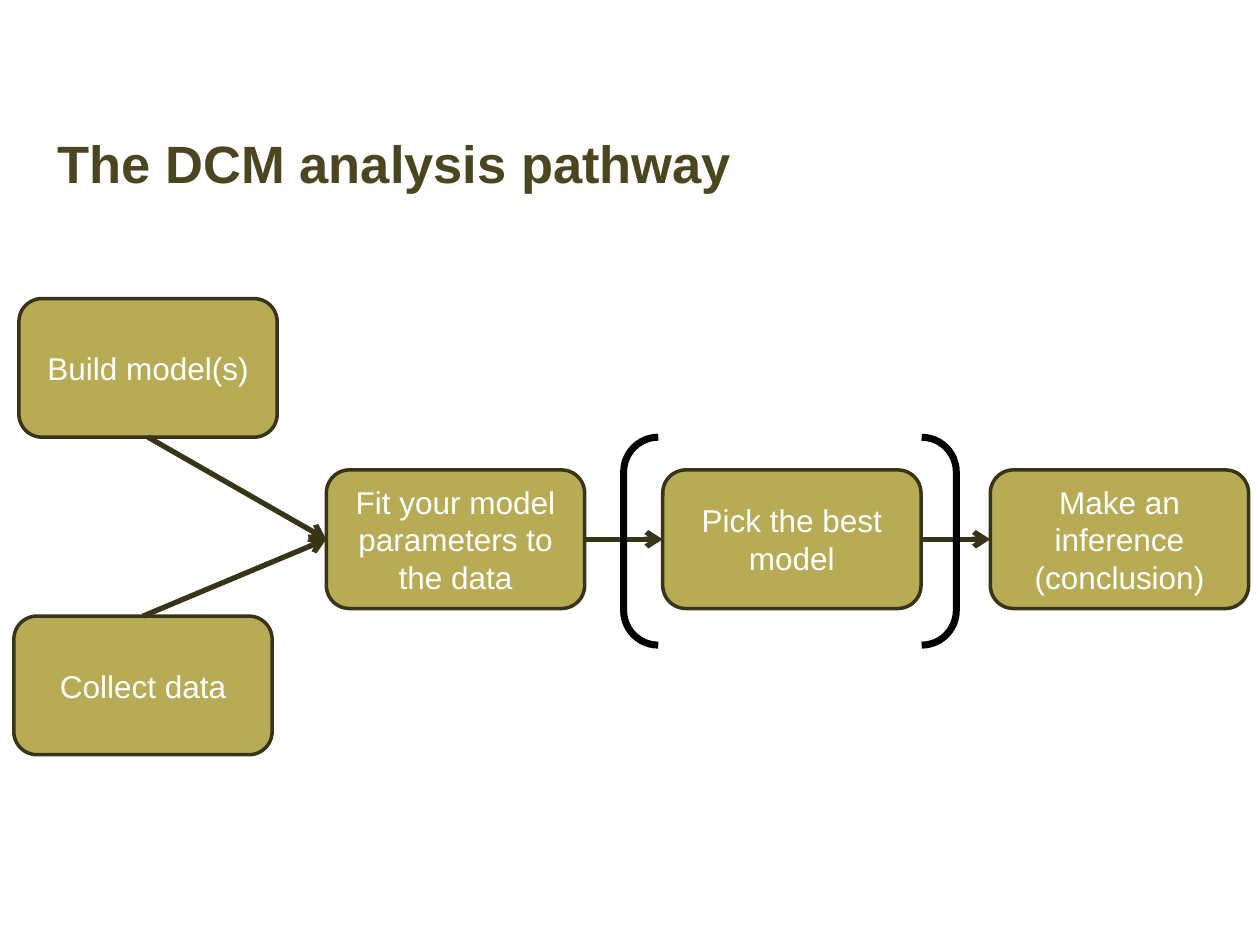
"""Build the DCM analysis pathway slide."""
from dataclasses import dataclass

from lxml import etree
from pptx import Presentation
from pptx.dml.color import RGBColor
from pptx.enum import shapes, text
from pptx.oxml import ns
from pptx.util import Inches, Pt

OLIVE = RGBColor(0xB7, 0xAB, 0x56)
DARK_OLIVE = RGBColor(0x38, 0x34, 0x18)
TITLE_OLIVE = RGBColor(0x4B, 0x46, 0x20)
WHITE = RGBColor(0xFF, 0xFF, 0xFF)
BLACK = RGBColor(0, 0, 0)
FONT = "Arial"
STEP_WIDTH, STEP_HEIGHT = 2.05, 1.1
ROW_TOP = 3.73
TOP, LEFT, BOTTOM, RIGHT = range(4)


@dataclass(frozen=True)
class Step:
    label: str
    left: float
    top: float = ROW_TOP


@dataclass(frozen=True)
class Link:
    source: str
    source_side: int
    target: str


STEPS = {
    "collect": Step("Collect data", 0.11, 4.89),
    "build": Step("Build model(s)", 0.15, 2.37),
    "fit": Step("Fit your model parameters to the data", 2.59),
    "pick": Step("Pick the best model", 5.26),
    "infer": Step("Make an inference (conclusion)", 7.86),
}
LINKS = [
    Link("collect", TOP, "fit"),
    Link("build", BOTTOM, "fit"),
    Link("pick", RIGHT, "infer"),
    Link("fit", RIGHT, "pick"),
]


def style_font(font, size: int, color: RGBColor, bold: bool = False) -> None:
    """Apply the slide's typeface with the given look."""
    font.name, font.size, font.bold = FONT, Pt(size), bold
    font.color.rgb = color


def add_title(slide, wording: str) -> None:
    """Fill and place the title placeholder."""
    title = slide.shapes.title
    title.left, title.top = Inches(0.36), Inches(0.99)
    title.width, title.height = Inches(9.28), Inches(1.42)
    frame = title.text_frame
    frame.text = wording
    frame.vertical_anchor = text.MSO_ANCHOR.TOP
    heading = frame.paragraphs[0]
    heading.alignment = text.PP_ALIGN.LEFT
    style_font(heading.font, 30, TITLE_OLIVE, bold=True)


def add_step(slide, step: Step):
    """Draw one rounded step box and return it."""
    box = slide.shapes.add_shape(
        shapes.MSO_SHAPE.ROUNDED_RECTANGLE, Inches(step.left), Inches(step.top),
        Inches(STEP_WIDTH), Inches(STEP_HEIGHT))
    box.shadow.inherit = False
    box.fill.solid()
    box.fill.fore_color.rgb = OLIVE
    box.line.color.rgb = DARK_OLIVE
    box.line.width = Pt(2)
    frame = box.text_frame
    frame.word_wrap = True
    frame.vertical_anchor = text.MSO_ANCHOR.MIDDLE
    frame.text = step.label
    label = frame.paragraphs[0]
    label.alignment = text.PP_ALIGN.CENTER
    style_font(label.font, 18, WHITE)
    return box


def add_link(slide, link: Link, boxes: dict) -> None:
    """Join two step boxes with an arrow into the target's left side."""
    arrow = slide.shapes.add_connector(shapes.MSO_CONNECTOR.STRAIGHT, 0, 0, 0, 0)
    arrow.begin_connect(boxes[link.source], link.source_side)
    arrow.end_connect(boxes[link.target], LEFT)
    arrow.line.color.rgb = DARK_OLIVE
    arrow.line.width = Pt(3)
    etree.SubElement(arrow.line._get_or_add_ln(), ns.qn("a:tailEnd"), type="arrow")
    etree.SubElement(arrow._element.spPr, ns.qn("a:effectLst"))


def add_brackets(slide) -> None:
    """Bracket the optional model selection step."""
    brackets = slide.shapes.add_shape(
        shapes.MSO_SHAPE.DOUBLE_BRACKET,
        Inches(4.95), Inches(3.47), Inches(2.64), Inches(1.65))
    brackets.shadow.inherit = False
    brackets.fill.background()
    brackets.line.color.rgb = BLACK
    brackets.line.width = Pt(4)


def main() -> None:
    """Assemble and save the slide."""
    deck = Presentation()
    deck.slide_width, deck.slide_height = Inches(10), Inches(7.5)
    slide = deck.slides.add_slide(deck.slide_layouts.get_by_name("Title Only"))
    add_title(slide, "The DCM analysis pathway")
    boxes = {key: add_step(slide, step) for key, step in STEPS.items()}
    for link in LINKS:
        add_link(slide, link, boxes)
    add_brackets(slide)
    deck.save("out.pptx")


if __name__ == "__main__":
    main()
